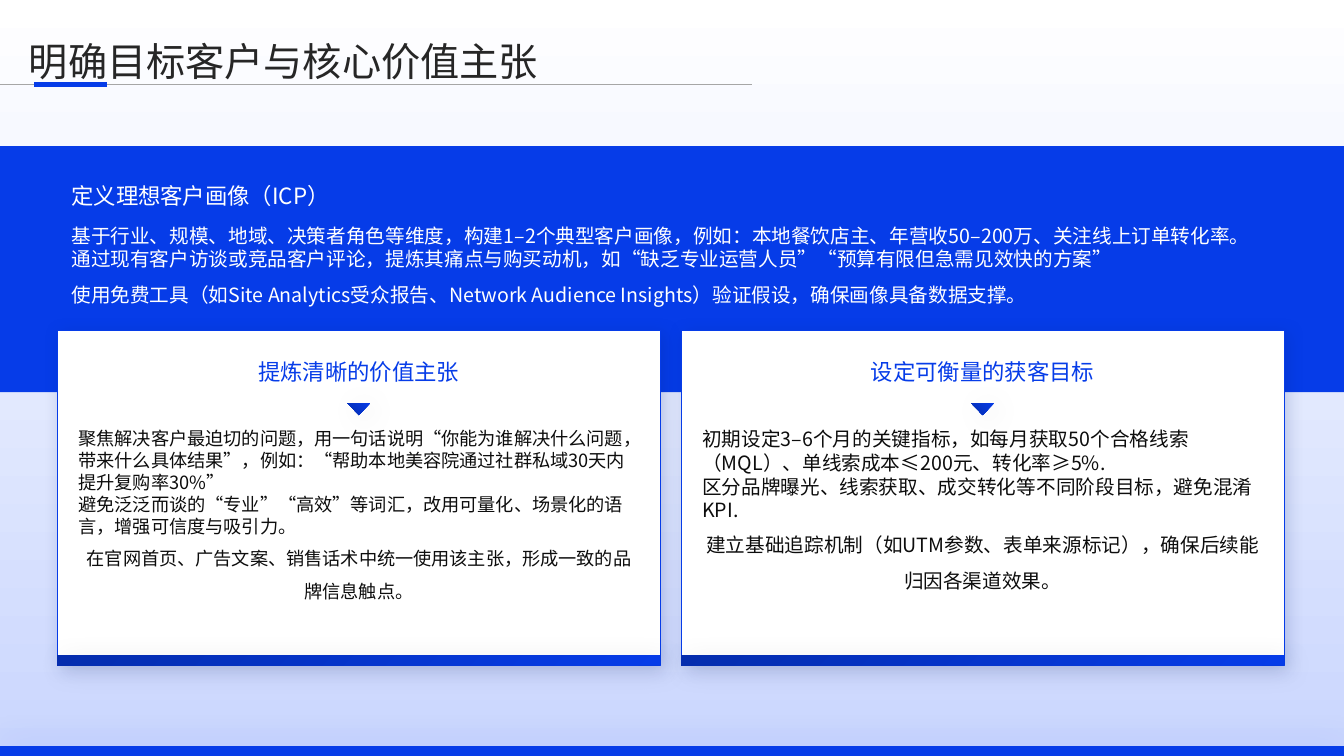
import pptx
import pptx.util
from lxml import etree
from pptx.dml.color import RGBColor
from pptx.enum.shapes import MSO_CONNECTOR, MSO_SHAPE
from pptx.enum.text import PP_ALIGN
from pptx.oxml.ns import qn
from pptx.util import Cm, Pt

TITLE = "明确目标客户与核心价值主张"
INTRO_HEADING = "定义理想客户画像（ICP）"
INTRO = [
    "基于行业、规模、地域、决策者角色等维度，构建1–2个典型客户画像，例如：本地餐饮店主、年营收50–200万、关注线上订单转化率。",
    "通过现有客户访谈或竞品客户评论，提炼其痛点与购买动机，如“缺乏专业运营人员”“预算有限但急需见效快的方案”",
    "使用免费工具（如Site Analytics受众报告、Network Audience Insights）验证假设，确保画像具备数据支撑。",
]
# heading, text size, paragraphs
CARDS = [
    ("提炼清晰的价值主张", 13, [
        "聚焦解决客户最迫切的问题，用一句话说明“你能为谁解决什么问题，带来什么具体结果”，例如：“帮助本地美容院通过社群私域30天内提升复购率30%”",
        "避免泛泛而谈的“专业”“高效”等词汇，改用可量化、场景化的语言，增强可信度与吸引力。",
        "在官网首页、广告文案、销售话术中统一使用该主张，形成一致的品牌信息触点。",
    ]),
    ("设定可衡量的获客目标", 14, [
        "初期设定3–6个月的关键指标，如每月获取50个合格线索（MQL）、单线索成本≤200元、转化率≥5%.",
        "区分品牌曝光、线索获取、成交转化等不同阶段目标，避免混淆KPI.",
        "建立基础追踪机制（如UTM参数、表单来源标记），确保后续能归因各渠道效果。",
    ]),
]

FONT = "Noto Sans CJK SC"
BLUE = RGBColor(0x06, 0x3C, 0xE8)
DEEP_BLUE = RGBColor(0x05, 0x2D, 0xAE)
PALE_BLUE = RGBColor(0xCA, 0xD6, 0xFE)
NAVY = RGBColor(0x03, 0x1E, 0x74)
WHITE = RGBColor(0xFF, 0xFF, 0xFF)
BLACK = RGBColor(0, 0, 0)
INK = RGBColor(0x0D, 0x0D, 0x0D)
TITLE_INK = RGBColor(0x26, 0x26, 0x26)
GREY = RGBColor(0xA6, 0xA6, 0xA6)

# colour, opacity %, blur pt, distance pt, direction in degrees
FOOTER_GLOW = (BLUE, 20, 25, 0, 0)
CARD_SHADOW = (NAVY, 19, 12, 3, 45)
ACCENT_SHADOW = (BLACK, 10, 20, 5, 45)

SLIDE_W, SLIDE_H = 33.87, 19.05
STRIP_H = 0.25
CARD_X, CARD_Y, CARD_W, CARD_H = 1.45, 8.33, 15.19, 8.43
CARD_PITCH = 15.72
CARD_PAD = 0.53
ARROW_W, ARROW_H = 0.58, 0.3


def add_shape(slide, kind, box, colors, angle=0, shadow=None):
    """One colour gives a solid fill, two give a gradient."""
    s = slide.shapes.add_shape(kind, *map(Cm, box))
    if len(colors) == 1:
        s.fill.solid()
        s.fill.fore_color.rgb = colors[0]
    else:
        s.fill.gradient()
        s.fill.gradient_angle = angle
        for stop, color in zip(s.fill.gradient_stops, colors):
            stop.color.rgb = color
    s.line.fill.background()
    s.shadow.inherit = False
    if shadow:
        color, opacity, blur, distance, direction = shadow
        effects = s._element.spPr.find(qn("a:effectLst"))
        outer = etree.SubElement(
            effects, qn("a:outerShdw"), blurRad=str(Pt(blur)), dist=str(Pt(distance)),
            dir=str(direction * 60000), algn="ctr", rotWithShape="0")
        tint = etree.SubElement(outer, qn("a:srgbClr"), val=str(color))
        etree.SubElement(tint, qn("a:alpha"), val=str(opacity * 1000))
    return s


def add_text(slide, box, paragraphs, size, color, align=PP_ALIGN.LEFT, spacing=1.0, inset=True):
    """Alignment and spacing apply to the last paragraph; earlier ones stay left and single."""
    tf = slide.shapes.add_textbox(*map(Cm, box)).text_frame
    tf.word_wrap = True
    if not inset:
        tf.margin_left = tf.margin_top = tf.margin_right = tf.margin_bottom = 0
    for i, text in enumerate(paragraphs):
        last = i == len(paragraphs) - 1
        p = tf.add_paragraph() if i else tf.paragraphs[0]
        p.alignment = align if last else PP_ALIGN.LEFT
        p.line_spacing = spacing if last else 1.0
        r = p.add_run()
        r.text = text
        r.font.size = Pt(size)
        r.font.name = FONT
        r.font.color.rgb = color
        etree.SubElement(r.font._element, qn("a:ea"), typeface=FONT)


def add_rule(slide, x1, x2, y, color, width):
    line = slide.shapes.add_connector(MSO_CONNECTOR.STRAIGHT, Cm(x1), Cm(y), Cm(x2), Cm(y))
    line.line.color.rgb = color
    line.line.width = Pt(width)
    etree.SubElement(line._element.spPr, qn("a:effectLst"))


def add_card(slide, x, heading, size, paragraphs):
    panel = add_shape(slide, MSO_SHAPE.ROUND_2_SAME_RECTANGLE, (x, CARD_Y, CARD_W, CARD_H),
                      [WHITE], shadow=CARD_SHADOW)
    panel.adjustments[0] = panel.adjustments[1] = 0
    panel.line.color.rgb = BLUE
    panel.line.width = Pt(0.25)
    text_x, text_w = x + CARD_PAD, CARD_W - 2 * CARD_PAD
    add_text(slide, (text_x, 9.02, text_w, 0.76), [heading], 16, BLUE,
             PP_ALIGN.CENTER, inset=False)
    add_text(slide, (text_x, 10.77, text_w, 5.74), paragraphs, size, INK,
             PP_ALIGN.CENTER, 1.5, inset=False)
    add_shape(slide, MSO_SHAPE.RECTANGLE, (x, CARD_Y + CARD_H - STRIP_H, CARD_W, STRIP_H),
              [BLUE, DEEP_BLUE], 135, ACCENT_SHADOW)
    arrow = add_shape(slide, MSO_SHAPE.ISOSCELES_TRIANGLE,
                      (x + (CARD_W - ARROW_W) / 2, 10.16, ARROW_W, ARROW_H),
                      [BLUE, DEEP_BLUE], 135, ACCENT_SHADOW)
    arrow._element.spPr.xfrm.set("flipV", "1")


def main():
    prs = pptx.Presentation()
    prs.slide_width, prs.slide_height = Cm(SLIDE_W), Cm(SLIDE_H)
    slide = prs.slides.add_slide(prs.slide_layouts[6])

    add_shape(slide, MSO_SHAPE.RECTANGLE, (0, 0, SLIDE_W, SLIDE_H), [WHITE, PALE_BLUE], 270)
    add_shape(slide, MSO_SHAPE.RECTANGLE, (0, SLIDE_H - STRIP_H, SLIDE_W, STRIP_H),
              [BLUE], shadow=FOOTER_GLOW)
    add_shape(slide, MSO_SHAPE.RECTANGLE, (0, 3.68, SLIDE_W, 6.2), [BLUE])
    add_text(slide, (1.8, 4.6, 30.24, 0.76), [INTRO_HEADING], 16, WHITE, inset=False)
    add_text(slide, (1.8, 5.64, 30.24, 2.51), INTRO, 14, WHITE, spacing=1.5, inset=False)

    for i, (heading, size, paragraphs) in enumerate(CARDS):
        add_card(slide, CARD_X + i * CARD_PITCH, heading, size, paragraphs)

    add_text(slide, (0.48, 0.69, 31.78, 1.57), [TITLE], 28, TITLE_INK, spacing=1.1)
    add_rule(slide, 0, 18.95, 2.13, GREY, 0.5)
    add_rule(slide, 0.86, 2.69, 2.13, BLUE, 3.5)
    prs.save("out.pptx")


if __name__ == "__main__":
    main()
